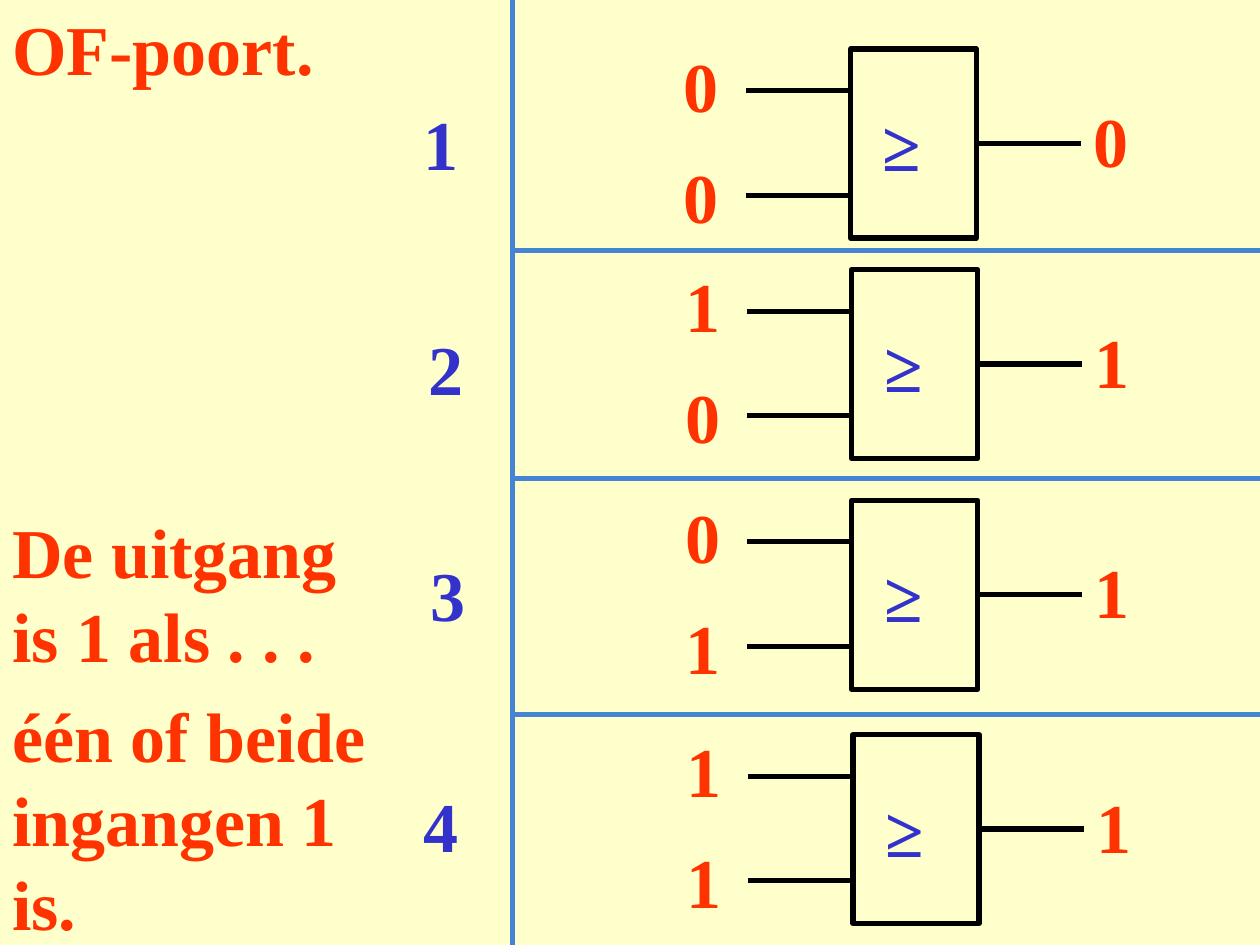
from dataclasses import dataclass

from lxml.etree import SubElement
from pptx import Presentation
from pptx.dml.color import RGBColor
from pptx.enum.shapes import MSO_CONNECTOR, MSO_SHAPE
from pptx.enum.text import MSO_ANCHOR, MSO_AUTO_SIZE, PP_ALIGN
from pptx.oxml.ns import qn
from pptx.util import Inches, Pt


@dataclass(frozen=True)
class Theme:
    background: RGBColor = RGBColor.from_string("FFFFCC")
    accent: RGBColor = RGBColor.from_string("FF3300")
    label: RGBColor = RGBColor.from_string("3333CC")
    outline: RGBColor = RGBColor.from_string("000000")
    divider: RGBColor = RGBColor.from_string("4584D3")
    font: str = "Times New Roman"
    text_size: Pt = Pt(40)
    line_spacing: Pt = Pt(48)
    line_width: Pt = Pt(3)


class SlideBuilder:
    def __init__(self, slide, theme):
        self.slide = slide
        self.theme = theme
        slide.background.fill.solid()
        slide.background.fill.fore_color.rgb = theme.background

    def set_text(self, shape, lines, color):
        frame = shape.text_frame
        frame.word_wrap = True
        frame.auto_size = MSO_AUTO_SIZE.NONE
        frame.vertical_anchor = MSO_ANCHOR.MIDDLE
        frame.text = "\n".join(lines)
        for paragraph in frame.paragraphs:
            paragraph.alignment = PP_ALIGN.LEFT
            paragraph.line_spacing = self.theme.line_spacing
            paragraph.font.name = self.theme.font
            paragraph.font.size = self.theme.text_size
            paragraph.font.bold = True
            paragraph.font.color.rgb = color

    def title(self, text, left, top, width, height):
        shape = self.slide.shapes.title
        shape.left, shape.top = Inches(left), Inches(top)
        shape.width, shape.height = Inches(width), Inches(height)
        self.set_text(shape, [text], self.theme.accent)

    def text(self, lines, left, top, width, height, color):
        shape = self.slide.shapes.add_textbox(
            Inches(left), Inches(top), Inches(width), Inches(height))
        self.set_text(shape, lines, color)

    def box(self, left, top, width, height):
        shape = self.slide.shapes.add_shape(
            MSO_SHAPE.RECTANGLE, Inches(left), Inches(top), Inches(width), Inches(height))
        shape.shadow.inherit = False
        shape.fill.background()
        shape.line.color.rgb = self.theme.outline
        shape.line.width = self.theme.line_width
        return shape

    def line(self, start, end, color):
        connector = self.slide.shapes.add_connector(
            MSO_CONNECTOR.STRAIGHT, *map(Inches, start + end))
        connector.line.color.rgb = color
        connector.line.width = self.theme.line_width
        SubElement(connector.element.spPr, qn("a:effectLst"))
        return connector

    def gate(self, left, top, inputs, output):
        """Draw an OR gate whose body has its corner at left, top."""
        theme = self.theme
        wire = 0.83
        self.text(["≥"], left + 0.16, top + 0.25, 0.67, 1, theme.label)
        body = self.box(left, top, 1, 1.5)
        for value, text_offset, wire_offset in zip(inputs, (-0.22, 0.66), (0.33, 1.16)):
            self.text([value], left - 1.42, top + text_offset, 0.83, 1, theme.accent)
            wire_top = top + wire_offset
            self.line((left - wire, wire_top), (left, wire_top), theme.outline)
        middle = top + 0.75
        output_wire = self.line((left + 1, middle), (left + 1 + wire, middle), theme.outline)
        output_wire.begin_connect(body, 3)
        self.text([output], left + 1 + wire, top + 0.22, 1.58, 1, theme.accent)


def main():
    presentation = Presentation()
    presentation.slide_width = Inches(10)
    presentation.slide_height = Inches(7.5)
    slide = presentation.slides.add_slide(presentation.slide_layouts[5])
    theme = Theme()
    builder = SlideBuilder(slide, theme)

    builder.title("OF-poort.", 0, 0, 8.5, 0.75)

    for left, top, inputs, output in (
        (6.75, 0.39, "00", "0"),
        (6.76, 2.14, "10", "1"),
        (6.76, 3.97, "01", "1"),
        (6.77, 5.83, "11", "1"),
    ):
        builder.gate(left, top, inputs, output)

    for divider_top in (1.99, 3.8, 5.67):
        builder.line((10, divider_top), (4.08, divider_top), theme.divider)
    builder.line((4.07, 0), (4.07, 7.5), theme.divider)

    row_labels = ((3.26, 0.63), (3.3, 2.42), (3.32, 4.21), (3.26, 6.04))
    for number, (left, top) in enumerate(row_labels, start=1):
        builder.text([str(number)], left, top, 0.67, 1, theme.label)

    builder.text(["De uitgang", "is 1 als . . ."], 0, 4.08, 3.33, 1.25, theme.accent)
    builder.text(["één of beide ingangen 1 is."], 0, 5.5, 3.33, 2, theme.accent)

    presentation.save("out.pptx")


if __name__ == "__main__":
    main()
